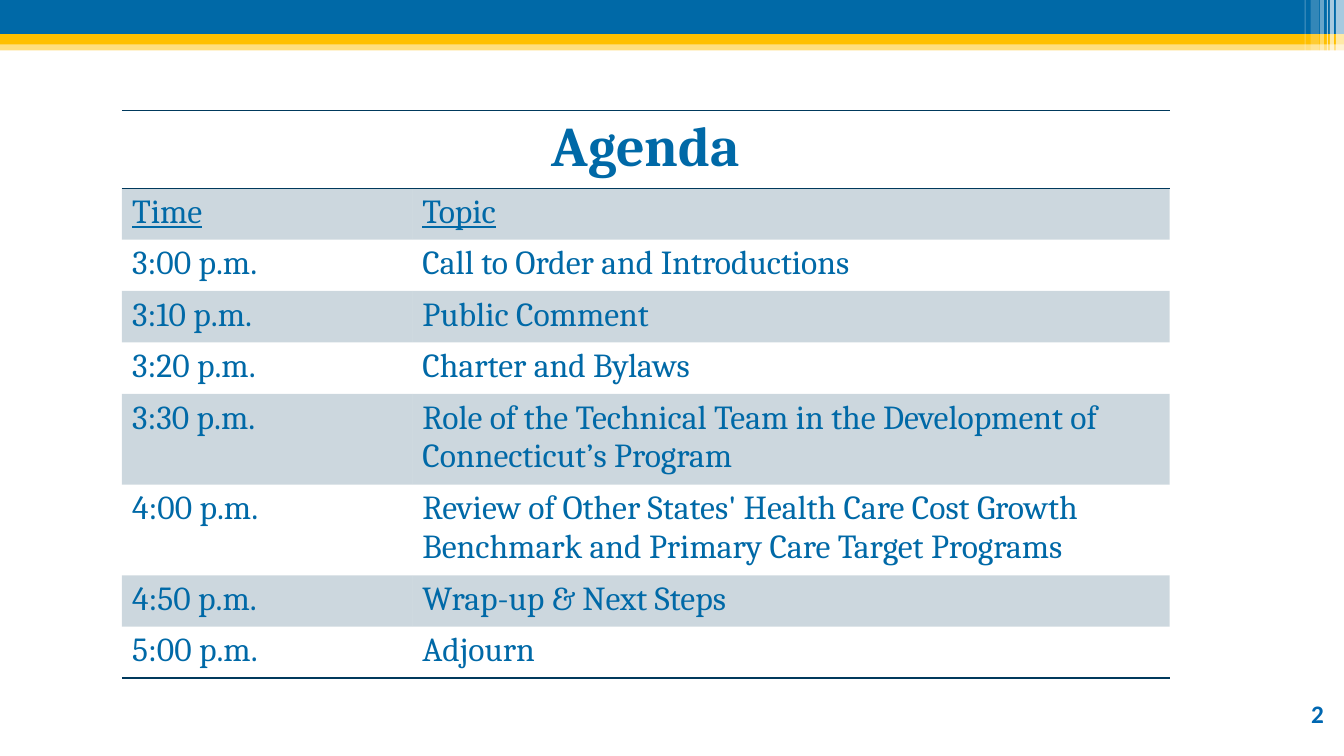
from lxml import etree
from pptx import Presentation
from pptx.dml.color import RGBColor
from pptx.enum.shapes import MSO_SHAPE
from pptx.enum.text import MSO_ANCHOR, PP_ALIGN
from pptx.oxml.ns import qn
from pptx.util import Inches, Pt

BLUE = RGBColor(0x00, 0x69, 0xA7)
NUMBER_BLUE = RGBColor(0x00, 0x67, 0xB1)
NAVY = RGBColor(0x00, 0x39, 0x5C)
GOLD = RGBColor(0xFF, 0xC0, 0x00)
WHITE = RGBColor(0xFF, 0xFF, 0xFF)
NO_STYLE = "{2D5ABB26-0587-4C30-8999-92F81FD0307C}"

BANDS = [(0.4, 0.1, GOLD, 50), (0, 0.34, BLUE, 100), (0.34, 0.1, GOLD, 100)]
STRIPES = [
    (0.08, 0.08, 0.68, 65),
    (0.14, 0.04, 0.68, 65),
    (0.17, 0.01, 0.68, 60),
    (0.24, 0.04, 0.68, 40),
    (0.33, 0.08, 0.64, 20),
    (0.39, 0.01, 0.64, 30),
]
AGENDA = [
    ("Time", "Topic"),
    ("3:00 p.m.", "Call to Order and Introductions"),
    ("3:10 p.m.", "Public Comment"),
    ("3:20 p.m.", "Charter and Bylaws"),
    ("3:30 p.m.", "Role of the Technical Team in the Development of Connecticut’s Program"),
    ("4:00 p.m.", "Review of Other States' Health Care Cost Growth Benchmark and Primary Care Target Programs"),
    ("4:50 p.m.", "Wrap-up & Next Steps"),
    ("5:00 p.m.", "Adjourn"),
]


def set_fill(fill, color, opacity):
    """Fill with a solid colour at a percentage of opacity."""
    fill.solid()
    fill.fore_color.rgb = color
    if opacity < 100:
        for clr in fill._xPr.iter(qn("a:srgbClr")):
            etree.SubElement(clr, qn("a:alpha"), val=str(opacity * 1000))


def add_rect(s, x, y, w, h, color, opacity):
    """Add a borderless rectangle."""
    sp = s.shapes.add_shape(MSO_SHAPE.RECTANGLE, Inches(x), Inches(y), Inches(w), Inches(h))
    sp.shadow.inherit = False
    sp.line.fill.background()
    set_fill(sp.fill, color, opacity)


def add_text(tf, text, font, size, color, bold=False, underline=False, align=PP_ALIGN.LEFT):
    """Write one run in the first paragraph of a text frame."""
    p = tf.paragraphs[0]
    p.alignment = align
    r = p.add_run()
    r.text = text
    f = r.font
    f.name, f.size, f.bold, f.underline = font, Pt(size), bold, underline
    f.color.rgb = color


def add_border(cell, side):
    """Rule one side of a cell in navy."""
    ln = etree.SubElement(cell._tc.get_or_add_tcPr(), qn(f"a:ln{side}"), w=str(Pt(1)))
    fill = etree.SubElement(ln, qn("a:solidFill"))
    etree.SubElement(fill, qn("a:srgbClr"), val=str(NAVY))


def add_header(s, x, y, w):
    """Draw the colour bands and the stripes fading at their right end."""
    for top, h, color, opacity in BANDS:
        add_rect(s, x, y + top, w, h, color, opacity)
    for inset, stripe_w, h, opacity in STRIPES:
        add_rect(s, x + w - inset, y, stripe_w, h, WHITE, opacity)


def add_agenda(s, x, y, w, time_w, row_h):
    """Draw the agenda table with its title row."""
    n = len(AGENDA) + 1
    frame = s.shapes.add_table(n, 2, Inches(x), Inches(y), Inches(w), Inches(n * row_h))
    tbl = frame.table
    tbl._tbl.tblPr.find(qn("a:tableStyleId")).text = NO_STYLE
    tbl.first_row = tbl.horz_banding = False
    tbl.columns[0].width = Inches(time_w)
    tbl.columns[1].width = Inches(w - time_w)
    for row in tbl.rows:
        row.height = Inches(row_h)
    title = tbl.cell(0, 0)
    title.merge(tbl.cell(0, 1))
    add_text(title.text_frame, "Agenda", "Cambria", 40, BLUE, bold=True, align=PP_ALIGN.CENTER)
    for col in range(2):
        add_border(tbl.cell(0, col), "T")
        add_border(tbl.cell(0, col), "B")
        add_border(tbl.cell(n - 1, col), "B")
    for i, entry in enumerate(AGENDA, 1):
        for col, text in enumerate(entry):
            cell = tbl.cell(i, col)
            add_text(cell.text_frame, text, "Cambria", 24, BLUE, underline=i == 1)
            if i % 2:
                set_fill(cell.fill, NAVY, 20)
            else:
                cell.fill.background()


def add_number(s, x, y, w, h):
    """Write the slide number."""
    tf = s.shapes.add_textbox(Inches(x), Inches(y), Inches(w), Inches(h)).text_frame
    tf.word_wrap = True
    tf.vertical_anchor = MSO_ANCHOR.BOTTOM
    add_text(tf, "2", "Calibri", 18, NUMBER_BLUE, bold=True, align=PP_ALIGN.RIGHT)


def main():
    """Build and save the agenda slide."""
    prs = Presentation()
    prs.slide_width, prs.slide_height = Inches(13.33), Inches(7.5)
    s = prs.slides.add_slide(prs.slide_layouts[6])
    add_header(s, 0, 0, 13.33)
    add_number(s, 12.67, 6.88, 0.56, 0.4)
    add_agenda(s, 1.21, 1.1, 10.39, 2.88, 0.51)
    prs.save("out.pptx")


if __name__ == "__main__":
    main()
